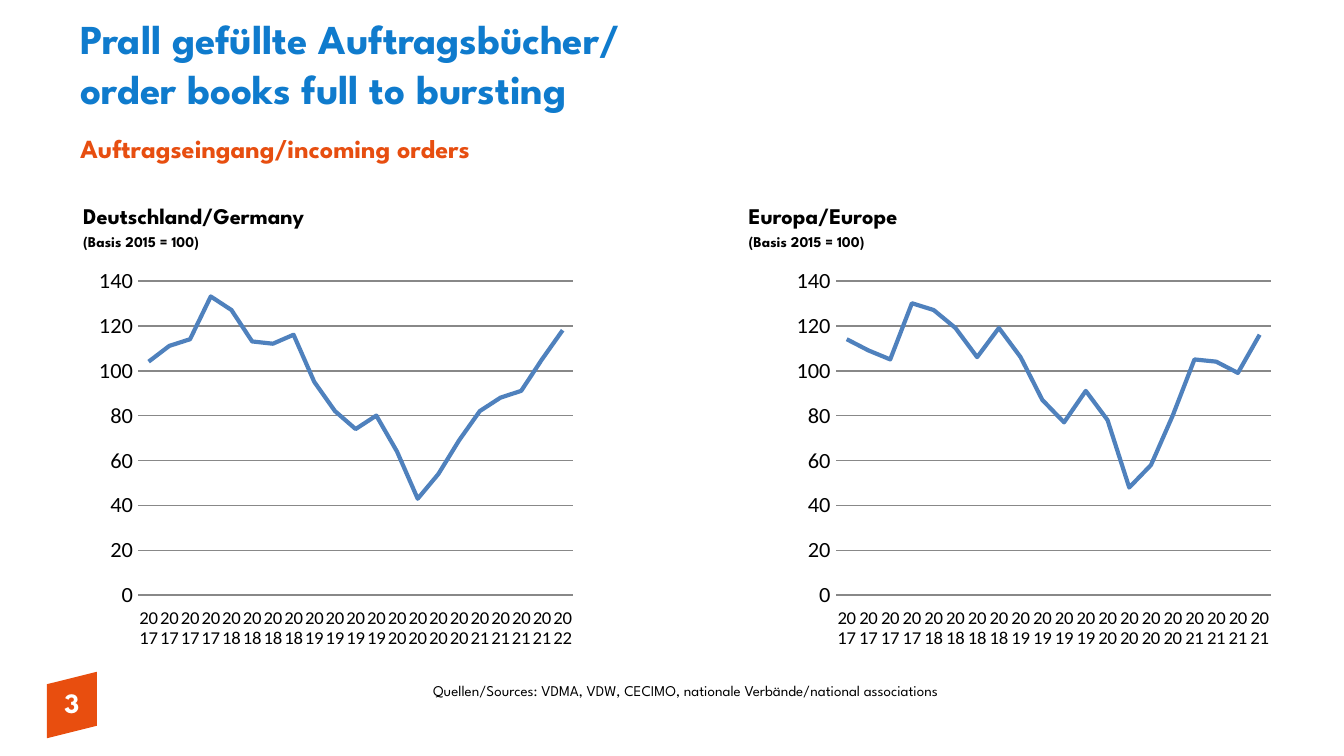
from dataclasses import dataclass

from lxml import etree
from pptx import Presentation
from pptx import util as u
from pptx.chart.data import CategoryChartData
from pptx.dml.color import RGBColor
from pptx.enum import chart, shapes, text


@dataclass(frozen=True)
class Theme:
    font: str = "League Spartan"
    chart_font: str = "Calibri"
    blue: str = "0F7BCD"
    orange: str = "E74E10"
    badge: str = "E84E0F"
    white: str = "FFFFFF"
    black: str = "000000"
    line: str = "4F81BD"
    grid: str = "888888"
    title: int = 22
    number: int = 15
    subtitle: int = 14
    label: int = 12
    axis: int = 12
    category: int = 10
    small: int = 8


T = Theme()
WIDTH = u.Inches(10)
HEIGHT = WIDTH * 9 // 16
QUARTERS = 4
PLOT = {"x": 0.114, "y": 0.074, "w": 0.821, "h": 0.821}
GERMANY = [104, 111, 114, 133, 127, 113, 112, 116, 95, 82, 74,
           80, 64, 43, 54, 69, 82, 88, 91, 105, 118]
EUROPE = [114, 109, 105, 130, 127, 119, 106, 119, 106, 87,
          77, 91, 78, 48, 58, 80, 105, 104, 99, 116]


def area(x, y, w, h):
    """Turn percentages of the slide into left, top, width, height."""
    return [int(side * share / 100) for side, share in
            ((WIDTH, x), (HEIGHT, y), (WIDTH, w), (HEIGHT, h))]


def style_font(font, name, size, color, bold=False):
    font.name, font.size, font.bold = name, u.Pt(size), bold
    font.color.rgb = RGBColor.from_string(color)


def add_text(s, place, lines, color=T.black, bold=True, align=None,
             anchor=text.MSO_ANCHOR.TOP, inset=None, gap=0):
    """Add a text box; lines holds (wording, size) pairs."""
    tf = s.shapes.add_textbox(*area(*place)).text_frame
    tf.word_wrap = True
    tf.vertical_anchor = anchor
    if inset is not None:
        tf.margin_left = tf.margin_right = u.Inches(inset)
        tf.margin_top = tf.margin_bottom = u.Inches(inset)
    for i, (wording, size) in enumerate(lines):
        p = tf.add_paragraph() if i else tf.paragraphs[0]
        p.alignment = align
        if i and gap:
            p.space_before = u.Pt(gap)
        r = p.add_run()
        r.text = wording
        style_font(r.font, T.font, size, color, bold)


def add_badge(s, number):
    sp = s.shapes.add_shape(shapes.MSO_SHAPE.PARALLELOGRAM,
                            *area(2.95, 89.8, 4.8, 6.93))
    sp.rotation = 346
    sp.shadow.inherit = False
    sp.fill.solid()
    sp.fill.fore_color.rgb = RGBColor.from_string(T.badge)
    sp.line.fill.background()
    add_text(s, (2.8, 89.85, 5.1, 6.22), [(number, T.number)], T.white,
             align=text.PP_ALIGN.CENTER, anchor=text.MSO_ANCHOR.MIDDLE,
             inset=0.05)


def fix_plot_area(ch):
    """Pin the inner plot area to fixed shares of the chart."""
    plot_area = ch._chartSpace.chart.plotArea
    ns = "{%s}" % plot_area.nsmap["c"]
    for old in plot_area.findall(ns + "layout"):
        plot_area.remove(old)
    layout = etree.Element(ns + "layout")
    manual = etree.SubElement(layout, ns + "manualLayout")
    settings = {"layoutTarget": "inner", "xMode": "edge", "yMode": "edge", **PLOT}
    for tag, value in settings.items():
        etree.SubElement(manual, ns + tag, val=str(value))
    plot_area.insert(0, layout)


def style_axis(axis, size):
    axis.major_tick_mark = axis.minor_tick_mark = chart.XL_TICK_MARK.NONE
    axis.format.line.fill.background()
    style_font(axis.tick_labels.font, T.chart_font, size, T.black)


def add_line_chart(s, place, values):
    data = CategoryChartData()
    data.categories = [str(2017 + i // QUARTERS) for i in range(len(values))]
    data.add_series("Series 1", values)
    ch = s.shapes.add_chart(chart.XL_CHART_TYPE.LINE, *area(*place), data).chart
    ch.has_legend = ch.has_title = False
    style_font(ch.font, "Arial", T.category, T.black)
    fix_plot_area(ch)

    # Axes and gridlines
    cat, val = ch.category_axis, ch.value_axis
    style_axis(cat, T.category)
    style_axis(val, T.axis)
    cat.tick_label_position = chart.XL_TICK_LABEL_POSITION.LOW
    for body in cat._element.iter("{*}bodyPr"):
        body.set("rot", "0")  # horizontal labels break into two lines
    val.minimum_scale, val.maximum_scale, val.major_unit = 0, 140, 20
    val.tick_labels.number_format = "0"
    val.tick_labels.number_format_is_linked = False
    val.has_major_gridlines = True
    grid = val.major_gridlines.format.line
    grid.color.rgb = RGBColor.from_string(T.grid)
    grid.width = u.Pt(1)

    # Series line
    plot = ch.plots[0]
    plot.vary_by_categories = False
    series = plot.series[0]
    series.smooth = False
    series.marker.style = chart.XL_MARKER_STYLE.NONE
    series.format.line.color.rgb = RGBColor.from_string(T.line)
    series.format.line.width = u.Pt(2.25)


def main():
    prs = Presentation()
    prs.slide_width, prs.slide_height = WIDTH, HEIGHT
    s = prs.slides.add_slide(prs.slide_layouts[6])

    # Page number, headings and sources
    add_badge(s, "3")
    add_text(s, (5, 0, 62.4, 16.71),
             [("Prall gefüllte Auftragsbücher/", T.title),
              ("order books full to bursting", T.title)],
             T.blue, anchor=text.MSO_ANCHOR.MIDDLE)
    add_text(s, (5, 16.65, 61, 6.93),
             [("Auftragseingang/incoming orders", T.subtitle)], T.orange)
    add_text(s, (11.75, 89.35, 59.4, 4.44),
             [("Quellen/Sources: VDMA, VDW, CECIMO, nationale "
               "Verbände/national associations ", T.small)],
             bold=False, align=text.PP_ALIGN.RIGHT)

    # One labelled chart per region
    for region, label_x, chart_x, inset, values in (
            ("Deutschland/Germany", 5.2, 5.8, None, GERMANY),
            ("Europa/Europe", 55.2, 57.7, 0.05, EUROPE)):
        add_line_chart(s, (chart_x, 33.4, 39.4, 52.44), values)
        add_text(s, (label_x, 25.85, 46.2, 9.42),
                 [(region, T.label), ("(Basis 2015 = 100)", T.small)],
                 inset=inset, gap=2)

    prs.save("out.pptx")


if __name__ == "__main__":
    main()
